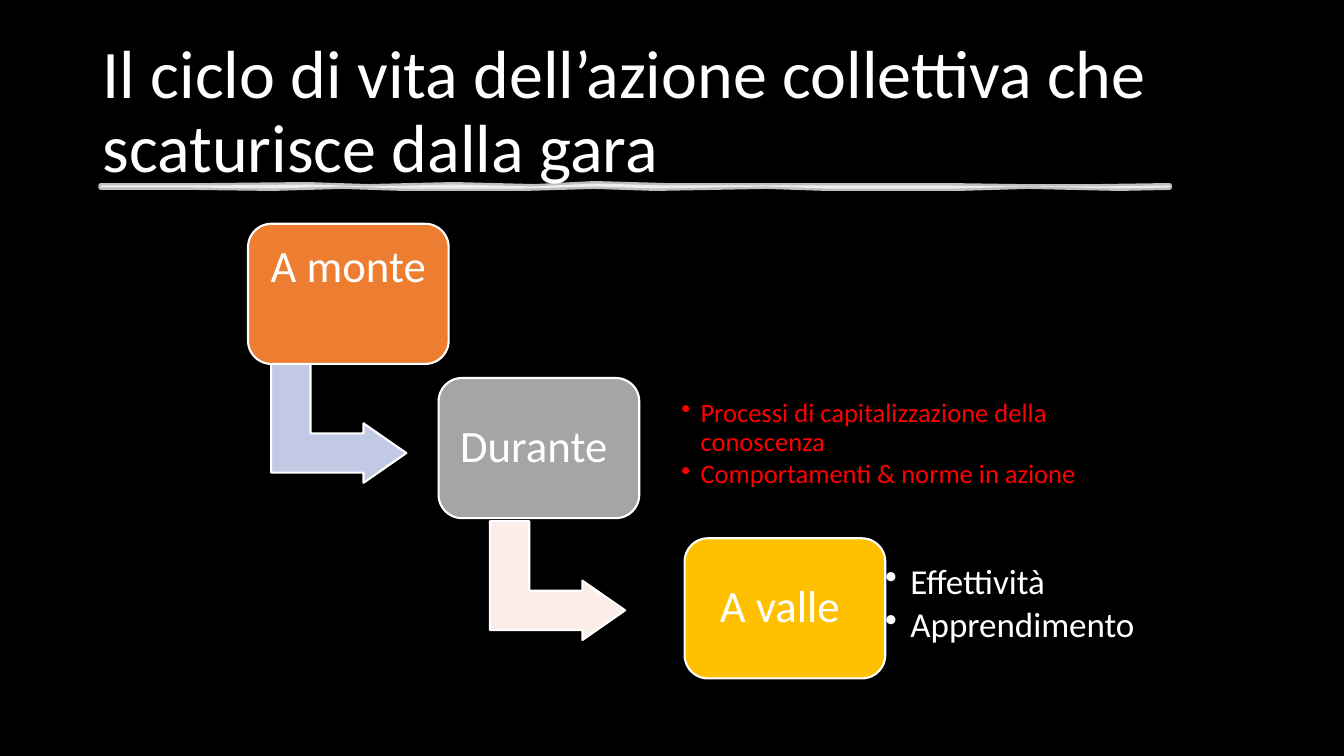
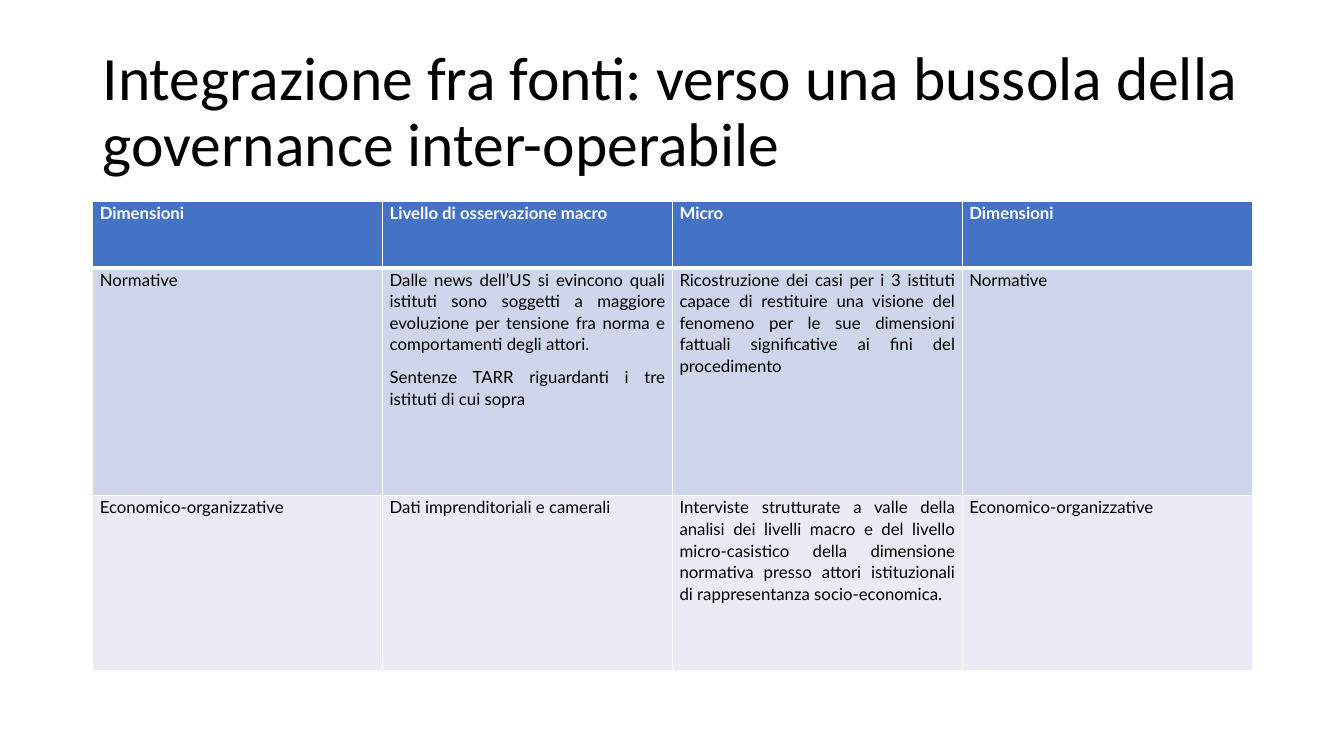
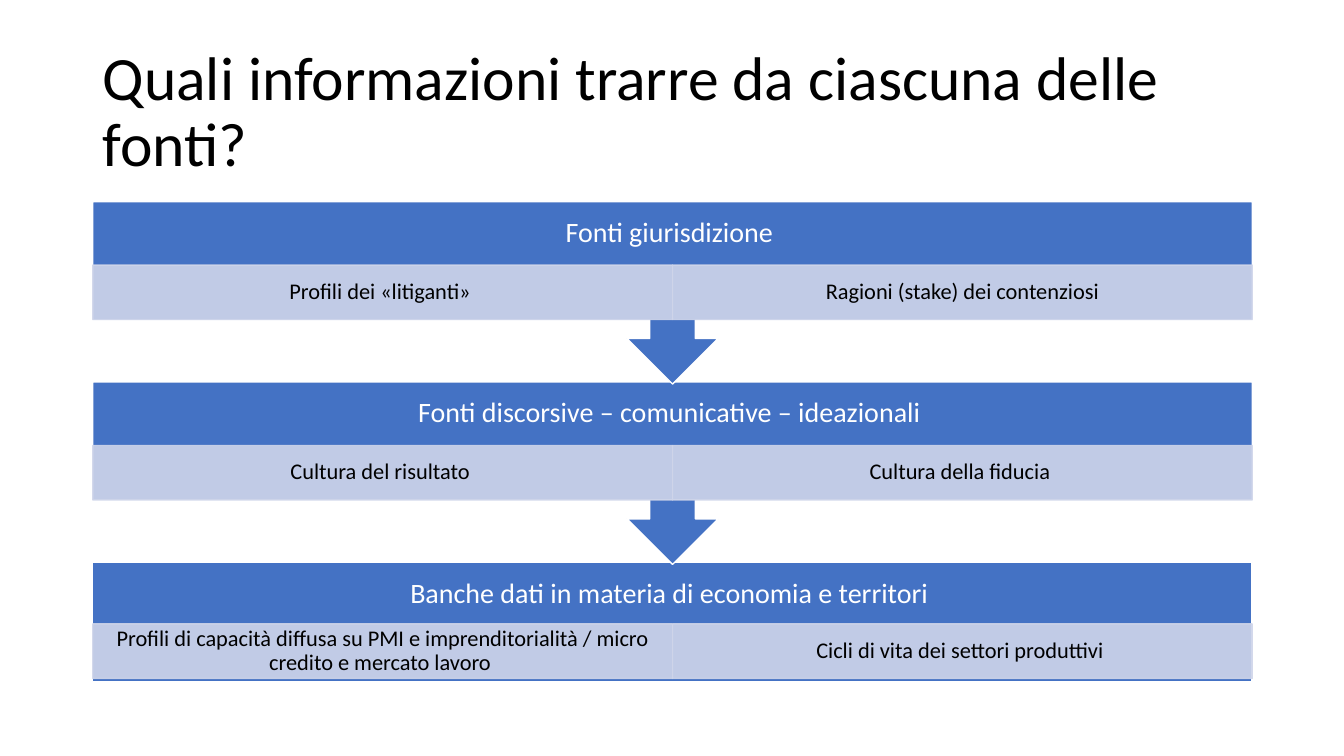
from lxml.etree import SubElement
from pptx import Presentation
from pptx.dml.color import RGBColor
from pptx.enum.shapes import MSO_SHAPE
from pptx.enum.text import MSO_ANCHOR, PP_ALIGN
from pptx.oxml.ns import qn
from pptx.util import Inches, Pt

# Shared style
WHITE = RGBColor(0xFF, 0xFF, 0xFF)
BLACK = RGBColor(0x00, 0x00, 0x00)
RED = RGBColor(0xFF, 0x00, 0x00)
BLUE = RGBColor(0x44, 0x72, 0xC4)
PERIWINKLE = RGBColor(0xC1, 0xC9, 0xE4)
BLUSH = RGBColor(0xFC, 0xED, 0xE8)
ORANGE = RGBColor(0xED, 0x7D, 0x31)
GREY = RGBColor(0xA5, 0xA5, 0xA5)
GOLD = RGBColor(0xFF, 0xC0, 0x00)
PALE_BLUE = RGBColor(0xCF, 0xD5, 0xEA)
PALER_BLUE = RGBColor(0xE9, 0xEB, 0xF5)
FONT, TABLE_FONT = "Calibri", "Lato"
LEFT, TOP, WIDTH = 0.92, 2, 11.5

# Slide 1: steps, arrows and bullet lists
CYCLE_TITLE = "Il ciclo di vita dell’azione collettiva che scaturisce dalla gara"
STEPS = [  # left, top, text, fill, anchor
    (2.46, 2.22, "A monte", ORANGE, MSO_ANCHOR.TOP),
    (4.35, 3.75, "Durante ", GREY, MSO_ANCHOR.MIDDLE),
    (6.79, 5.34, "A valle ", GOLD, MSO_ANCHOR.MIDDLE),
]
ARROWS = [(2.77, 3.53, PERIWINKLE), (4.94, 5.09, BLUSH)]
BULLETS = [  # box, inset, indent, size, space after, colour, items
    ((6.66, 3.85, 4.3, 1.12), 0.1, 0.19, 19, 3, RED,
     ["Processi di capitalizzazione della conoscenza", "Comportamenti & norme in azione"]),
    ((8.65, 5.44, 2.75, 1.12), 0.13, 0.25, 25, 4, WHITE, ["Effettività", "Apprendimento"]),
]
BRUSH_TOP = [(1, 1.84), (2.1, 1.84), (3.05, 1.83), (3.65, 1.85), (4.5, 1.83), (5.3, 1.85),
             (5.9, 1.82), (6.6, 1.84), (7.5, 1.84), (8.4, 1.84), (9.4, 1.84), (10.1, 1.85),
             (10.9, 1.85), (11.6, 1.84)]
BRUSH_BOTTOM = [(11.6, 1.86), (11.1, 1.87), (10.2, 1.85), (9.5, 1.87), (8.2, 1.87), (7.6, 1.85),
                (6.5, 1.87), (5.9, 1.85), (5.2, 1.87), (4, 1.87), (3.4, 1.85), (2.7, 1.87),
                (1.9, 1.86), (1, 1.86)]

# Slide 2: table
TABLE_TITLE = "Integrazione fra fonti: verso una bussola della governance inter-operabile"
ROW_HEIGHTS = [0.66, 2.26, 1.73]
ROW_FILLS = [BLUE, PALE_BLUE, PALER_BLUE]
ROWS = [
    ["Dimensioni ", "Livello di osservazione macro ", "Micro ", "Dimensioni "],
    ["Normative ",
     "Dalle news dell’US si evincono quali istituti sono soggetti a maggiore evoluzione per "
     "tensione fra norma e comportamenti degli attori. \n"
     "Sentenze TARR riguardanti i tre istituti di cui sopra",
     "Ricostruzione dei casi per i 3 istituti capace di restituire una visione del fenomeno "
     "per le sue dimensioni fattuali significative ai fini del procedimento",
     "Normative "],
    ["Economico-organizzative",
     "Dati imprenditoriali e camerali ",
     "Interviste strutturate a valle della analisi dei livelli macro e del livello "
     "micro-casistico della dimensione normativa presso attori istituzionali di "
     "rappresentanza socio-economica. ",
     "Economico-organizzative"],
]

# Slide 3: sources, each with two kinds of information
SOURCES_TITLE = "Quali informazioni trarre da ciascuna delle fonti?"
SOURCES = [
    ("Fonti giurisdizione ", ["Profili dei «litiganti» ", "Ragioni (stake) dei contenziosi"]),
    ("Fonti discorsive – comunicative – ideazionali ",
     ["Cultura del risultato ", "Cultura della fiducia "]),
    ("Banche dati in materia di economia e territori ",
     ["Profili di capacità diffusa su PMI e imprenditorialità / micro credito e mercato lavoro ",
      "Cicli di vita dei settori produttivi "]),
]
SOURCE_STEP, HEAD_H, DETAIL_H = 1.79, 0.63, 0.54


def write(tf, text, size, color, align=PP_ALIGN.LEFT, anchor=MSO_ANCHOR.MIDDLE,
          inset=(0.1, 0.05), font=FONT, bold=False, spacing=0.9, after=0):
    """Fill a text frame; each line of text becomes a paragraph."""
    tf.text = text
    tf.word_wrap = True
    tf.vertical_anchor = anchor
    tf.margin_left = tf.margin_right = Inches(inset[0])
    tf.margin_top = tf.margin_bottom = Inches(inset[1])
    for p in tf.paragraphs:
        p.alignment, p.line_spacing, p.space_after = align, spacing, Pt(after)
        for r in p.runs:
            r.font.name, r.font.size, r.font.bold = font, Pt(size), bold
            r.font.color.rgb = color


def add_text(s, box, text, size, color, **style):
    tf = s.shapes.add_textbox(*map(Inches, box)).text_frame
    write(tf, text, size, color, **style)
    return tf


def paint(sp, fill, line, width, opacity=100):
    sp.shadow.inherit = False
    sp.fill.solid()
    sp.fill.fore_color.rgb = fill
    sp.line.color.rgb = line
    sp.line.width = Pt(width)
    if opacity < 100:
        for clr in sp._element.spPr.iter(qn("a:srgbClr")):
            SubElement(clr, qn("a:alpha"), val=str(opacity * 1000))


def add_box(s, kind, box, fill, line=WHITE, width=1, opacity=100):
    sp = s.shapes.add_shape(kind, *map(Inches, box))
    paint(sp, fill, line, width, opacity)
    return sp


def add_slide(prs, title, background=WHITE, color=BLACK, size=44):
    s = prs.slides.add_slide(prs.slide_layouts[6])
    s.background.fill.solid()
    s.background.fill.fore_color.rgb = background
    add_text(s, (LEFT, 0.4, WIDTH, 1.45), title, size, color)
    return s


def add_borders(cell, bottom):
    tc_pr = cell._tc.get_or_add_tcPr()
    for side, width in (("L", 1), ("R", 1), ("T", 1), ("B", bottom)):
        ln = SubElement(tc_pr, qn(f"a:ln{side}"), w=str(Pt(width)))
        fill = SubElement(ln, qn("a:solidFill"))
        SubElement(fill, qn("a:srgbClr"), val=str(WHITE))


def build_cycle(prs):
    s = add_slide(prs, CYCLE_TITLE, BLACK, WHITE, 48.6)
    # Brush stroke under the title
    points = [(Inches(x), Inches(y)) for x, y in BRUSH_TOP + BRUSH_BOTTOM]
    builder = s.shapes.build_freeform(*points[0])
    builder.add_line_segments(points[1:], close=True)
    paint(builder.convert_to_shape(), WHITE, WHITE, 3.5, 75)
    # Arrows between steps
    for x, y, fill in ARROWS:
        sp = add_box(s, MSO_SHAPE.BENT_UP_ARROW, (x, y, 1.18, 1.34), fill, width=1.5)
        sp.rotation = 90
        for i, value in enumerate((0.33, 0.25, 0.36)):
            sp.adjustments[i] = value
    # Steps
    for x, y, text, fill, anchor in STEPS:
        sp = add_box(s, MSO_SHAPE.ROUNDED_RECTANGLE, (x, y, 1.99, 1.39), fill, width=1.5)
        write(sp.text_frame, text, 32, WHITE, PP_ALIGN.CENTER, anchor, (0.13, 0.13))
    # Bullet lists
    for box, inset, indent, size, after, color, items in BULLETS:
        tf = add_text(s, box, "\n".join(items), size, color, inset=(inset, inset), after=after)
        for p in tf.paragraphs:
            p_pr = p._p.get_or_add_pPr()
            p_pr.set("marL", str(Inches(indent)))
            p_pr.set("indent", str(-Inches(indent)))
            SubElement(p_pr, qn("a:buChar"), char="•")


def build_table(prs):
    s = add_slide(prs, TABLE_TITLE)
    table = s.shapes.add_table(len(ROWS), len(ROWS[0]), Inches(LEFT), Inches(TOP),
                               Inches(WIDTH), Inches(sum(ROW_HEIGHTS))).table
    for i, (texts, height, fill) in enumerate(zip(ROWS, ROW_HEIGHTS, ROW_FILLS)):
        head = i == 0
        table.rows[i].height = Inches(height)
        for j, text in enumerate(texts):
            cell = table.cell(i, j)
            write(cell.text_frame, text, 12, WHITE if head else BLACK, PP_ALIGN.JUSTIFY,
                  font=TABLE_FONT, bold=head, spacing=1.07, after=8)
            cell.vertical_anchor = MSO_ANCHOR.TOP
            cell.margin_left = cell.margin_right = Inches(0.07)
            cell.margin_top = cell.margin_bottom = 0
            add_borders(cell, 3 if head else 1)
            cell.fill.solid()
            cell.fill.fore_color.rgb = fill


def build_sources(prs):
    s = add_slide(prs, SOURCES_TITLE)
    last = len(SOURCES) - 1
    # From the bottom up, so each arrow tip lies over the next block
    for i, (heading, details) in reversed(list(enumerate(SOURCES))):
        y = TOP + i * SOURCE_STEP
        if i == last:
            add_box(s, MSO_SHAPE.RECTANGLE, (LEFT, y, WIDTH, 1.18), BLUE)
            detail_y = y + 0.61
        else:
            sp = add_box(s, MSO_SHAPE.UP_ARROW_CALLOUT, (LEFT, y, WIDTH, 1.81), BLUE)
            sp.rotation = 180
            detail_y = y + HEAD_H
        add_text(s, (LEFT, y, WIDTH, HEAD_H), heading, 20, WHITE,
                 align=PP_ALIGN.CENTER, inset=(0.16, 0.16))
        detail_w = WIDTH / len(details)
        for j, detail in enumerate(details):
            sp = add_box(s, MSO_SHAPE.RECTANGLE,
                         (LEFT + j * detail_w, detail_y, detail_w, DETAIL_H),
                         PALE_BLUE, PALE_BLUE, opacity=90)
            write(sp.text_frame, detail, 16, BLACK, PP_ALIGN.CENTER, inset=(0.12, 0.02))


def main():
    prs = Presentation()
    prs.slide_width, prs.slide_height = Inches(13.33), Inches(7.5)
    build_cycle(prs)
    build_table(prs)
    build_sources(prs)
    prs.save("out.pptx")


if __name__ == "__main__":
    main()
